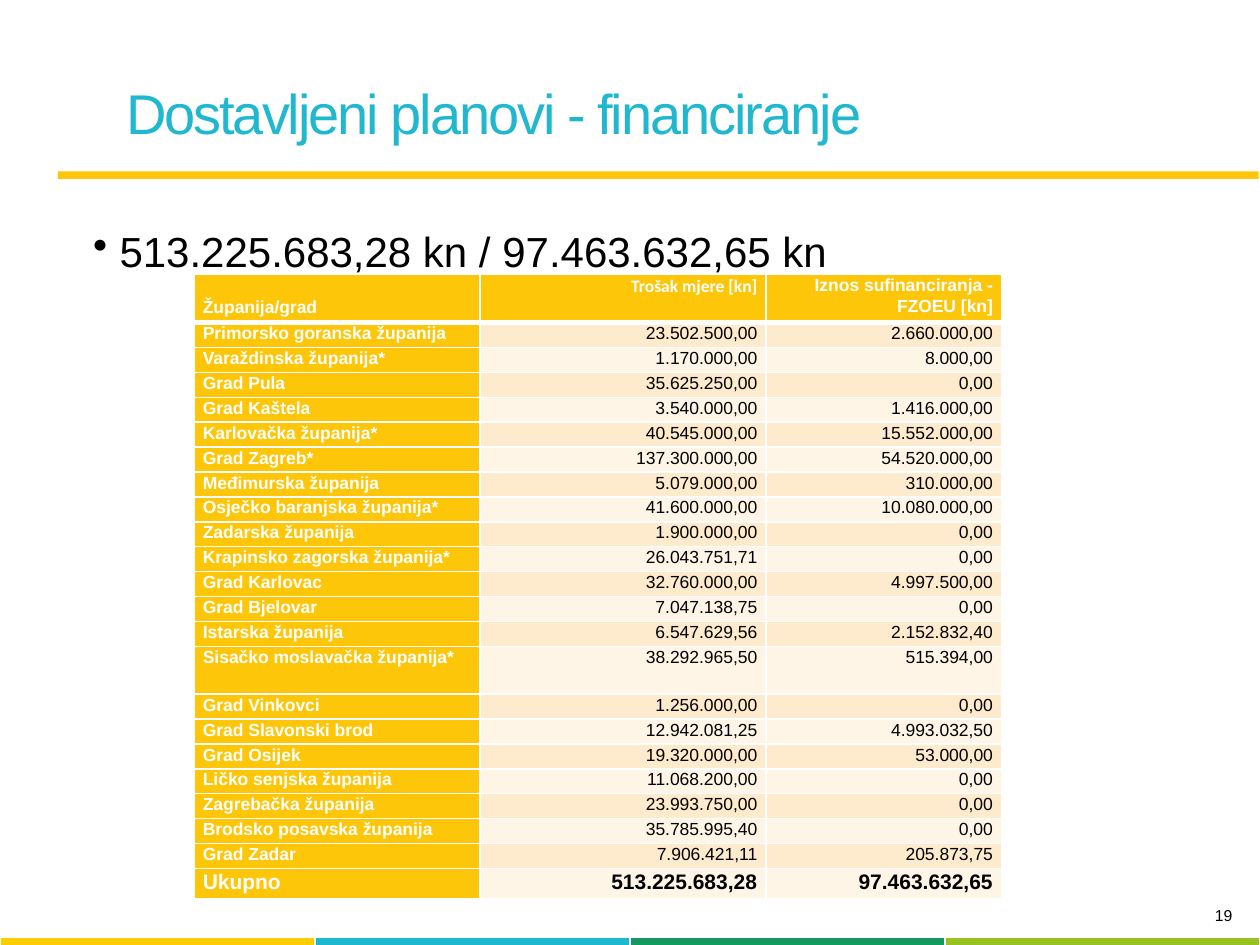
from lxml import etree
from pptx import Presentation
from pptx import util as u
from pptx.dml.color import RGBColor
from pptx.enum import shapes, text
from pptx.oxml.ns import qn

COLORS = {
    "title": "21B7CF", "gold": "FDC609", "white": "FFFFFF", "black": "000000",
    "dark_band": "FEEACC", "light_band": "FFF5E7",
}
STRIP_COLORS = ["FFCC00", "1CB8CF", "159961", "98C222"]
TITLE = "Dostavljeni planovi - financiranje"
SUMMARY = "513.225.683,28 kn / 97.463.632,65 kn"
PAGE_NUMBER = "19"
HEADER = ("Županija/grad", "Trošak mjere [kn]", "Iznos sufinanciranja - FZOEU [kn]")
PLANS = [
    ("Primorsko goranska županija", "23.502.500,00", "2.660.000,00"),
    ("Varaždinska županija*", "1.170.000,00", "8.000,00"),
    ("Grad Pula", "35.625.250,00", "0,00"),
    ("Grad Kaštela", "3.540.000,00", "1.416.000,00"),
    ("Karlovačka županija*", "40.545.000,00", "15.552.000,00"),
    ("Grad Zagreb*", "137.300.000,00", "54.520.000,00"),
    ("Međimurska županija", "5.079.000,00", "310.000,00"),
    ("Osječko baranjska županija*", "41.600.000,00", "10.080.000,00"),
    ("Zadarska županija", "1.900.000,00", "0,00"),
    ("Krapinsko zagorska županija*", "26.043.751,71", "0,00"),
    ("Grad Karlovac", "32.760.000,00", "4.997.500,00"),
    ("Grad Bjelovar", "7.047.138,75", "0,00"),
    ("Istarska županija", "6.547.629,56", "2.152.832,40"),
    ("Sisačko moslavačka županija*", "38.292.965,50", "515.394,00"),
    ("Grad Vinkovci", "1.256.000,00", "0,00"),
    ("Grad Slavonski brod", "12.942.081,25", "4.993.032,50"),
    ("Grad Osijek", "19.320.000,00", "53.000,00"),
    ("Ličko senjska županija", "11.068.200,00", "0,00"),
    ("Zagrebačka županija", "23.993.750,00", "0,00"),
    ("Brodsko posavska županija", "35.785.995,40", "0,00"),
    ("Grad Zadar", "7.906.421,11", "205.873,75"),
]
TOTAL = ("Ukupno", "513.225.683,28", "97.463.632,65")

SLIDE_WIDTH, SLIDE_HEIGHT = 10, 7.5
TABLE_BOX = (1.54, 2.18, 6.42, 4.96)
COLUMN_WIDTHS = (2.27, 2.27, 1.87)
TALL_ROW, TOTAL_ROW = 0.38, 0.24
TALL_PLAN = "Sisačko moslavačka županija*"


def rgb(color):
    return RGBColor.from_string(COLORS.get(color, color))


def inches(*lengths):
    return [u.Inches(length) for length in lengths]


def write(frame, words, size=10, color="black", bold=False, font="Arial",
          align=text.PP_ALIGN.LEFT, line_spacing=None, bullet=None, tracking=None):
    paragraph = frame.paragraphs[0]
    if bullet:
        properties = paragraph._p.get_or_add_pPr()
        properties.set("marL", str(u.Inches(0.21)))
        properties.set("indent", str(-u.Inches(0.21)))
        etree.SubElement(properties, qn("a:buChar")).set("char", bullet)
    paragraph.alignment = align
    if line_spacing:
        paragraph.line_spacing = line_spacing
    run = paragraph.add_run()
    run.text = words
    run.font.size, run.font.bold, run.font.name = u.Pt(size), bold, font
    run.font.color.rgb = rgb(color)
    if tracking:
        run._r.get_or_add_rPr().set("spc", str(round(tracking * 100)))


def fill_cell(cell, color):
    cell.fill.solid()
    cell.fill.fore_color.rgb = rgb(color)


def set_borders(cell, bottom=1):
    properties = cell._tc.get_or_add_tcPr()
    for side, points in (("L", 1), ("R", 1), ("T", 1), ("B", bottom)):
        line = etree.SubElement(properties, qn(f"a:ln{side}"), w=str(u.Pt(points)))
        solid = etree.SubElement(line, qn("a:solidFill"))
        etree.SubElement(solid, qn("a:srgbClr"), val=COLORS["white"])


def add_text_box(slide, box, words, **text_format):
    frame = slide.shapes.add_textbox(*inches(*box)).text_frame
    frame.word_wrap = True
    write(frame, words, **text_format)
    return frame


def add_color_strip(slide):
    strip = slide.shapes.add_table(
        1, len(STRIP_COLORS), *inches(0, 7.44, SLIDE_WIDTH, 0.17)).table
    for cell, color in zip(strip.rows[0].cells, STRIP_COLORS):
        fill_cell(cell, color)


def add_title(slide):
    title = slide.shapes.title
    title.left, title.top, title.width, title.height = inches(0.9, 0.57, 8.83, 0.64)
    title.text_frame.vertical_anchor = text.MSO_ANCHOR.MIDDLE
    write(title.text_frame, TITLE, size=32, color="title", tracking=-1.2)

    rule = slide.shapes.add_shape(
        shapes.MSO_SHAPE.RECTANGLE, *inches(0.46, 1.36, 9.53, 0.06))
    rule.shadow.inherit = False
    rule.fill.solid()
    rule.fill.fore_color.rgb = rgb("gold")
    rule.line.fill.background()


def add_plan_table(slide):
    rows = [HEADER, *PLANS, TOTAL]
    last = len(rows) - 1
    table = slide.shapes.add_table(
        len(rows), len(HEADER), *inches(*TABLE_BOX)).table
    for column, width in zip(table.columns, COLUMN_WIDTHS):
        column.width = u.Inches(width)
    plan_row = (TABLE_BOX[3] - 2 * TALL_ROW - TOTAL_ROW) / (len(PLANS) - 1)

    for r, values in enumerate(rows):
        is_header, is_total = r == 0, r == last
        is_tall = is_header or values[0] == TALL_PLAN
        height = TALL_ROW if is_tall else TOTAL_ROW if is_total else plan_row
        table.rows[r].height = u.Inches(height)
        for c, value in enumerate(values):
            cell = table.cell(r, c)
            is_gold = is_header or c == 0
            cell.margin_left = cell.margin_right = u.Inches(0.07)
            cell.margin_top = cell.margin_bottom = 0
            set_borders(cell, bottom=3 if is_header else 1)
            band = "dark_band" if r % 2 else "light_band"
            fill_cell(cell, "gold" if is_gold else band)
            write(cell.text_frame, value,
                  size=12 if is_total else 10,
                  color="white" if is_gold else "black",
                  bold=is_gold or is_total,
                  font="Calibri" if is_header and c == 1 else "Arial",
                  align=text.PP_ALIGN.RIGHT if c else text.PP_ALIGN.LEFT,
                  line_spacing=1.07)
    corner = table.cell(0, 0)
    corner.vertical_anchor = text.MSO_ANCHOR.BOTTOM
    corner.margin_bottom = u.Inches(0.04)


def main():
    presentation = Presentation()
    presentation.slide_width, presentation.slide_height = inches(SLIDE_WIDTH, SLIDE_HEIGHT)
    slide = presentation.slides.add_slide(presentation.slide_layouts.get_by_name("Title Only"))
    add_color_strip(slide)
    add_text_box(slide, (7.91, 7.14, 1.97, 0.31), PAGE_NUMBER,
                 size=9, align=text.PP_ALIGN.RIGHT)
    add_title(slide)
    summary = add_text_box(slide, (0.64, 1.7, 8.92, 0.81), SUMMARY, size=24, bullet="•")
    summary.margin_top = u.Inches(0.09)
    add_plan_table(slide)
    presentation.save("out.pptx")


if __name__ == "__main__":
    main()
